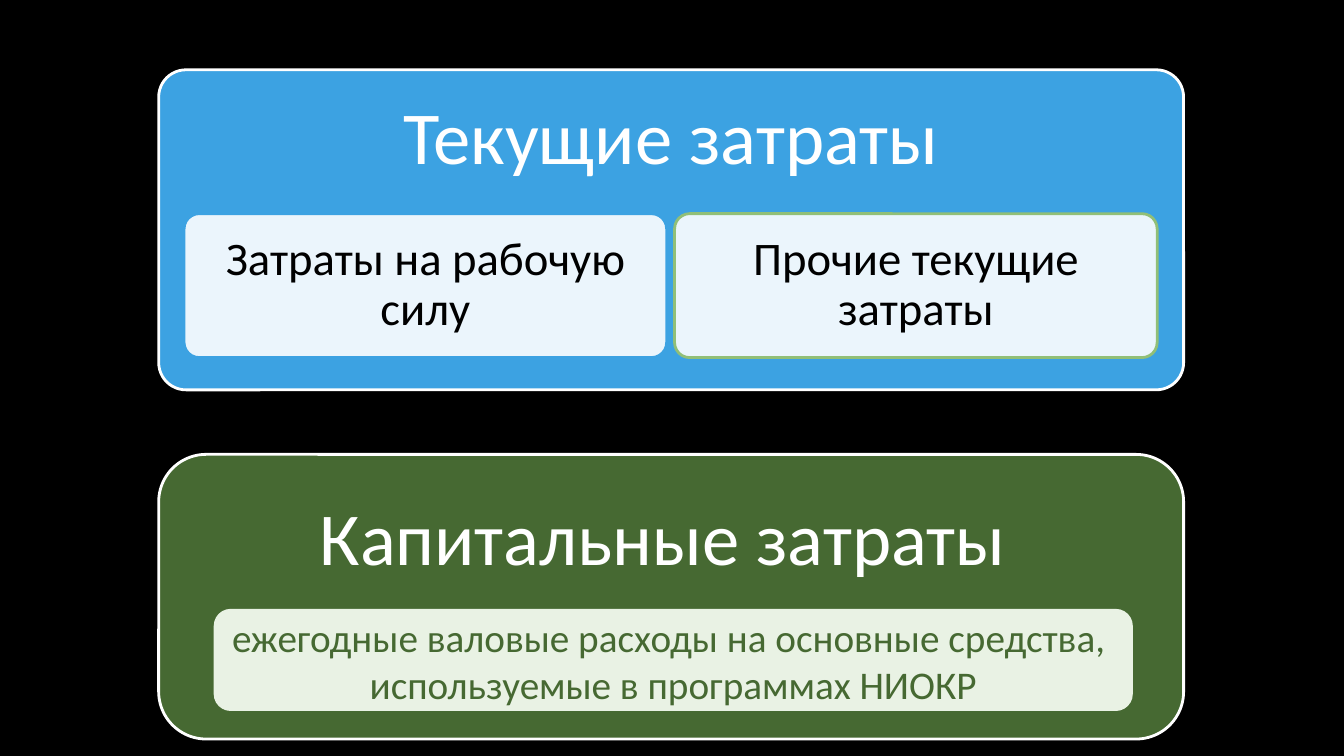
import pptx
import pptx.dml.color
import pptx.enum.shapes
import pptx.enum.text
import pptx.oxml.ns
import pptx.util
from lxml import etree
from pptx.util import Cm

COLOURS = {
    "background": "000000",
    "blue": "3CA2E2",
    "green": "466932",
    "light green": "91BF77",
    "pale green": "E9F2E4",
    "white": "FFFFFF",
    "black": "000000",
}

# Lengths are in centimetres.
PANELS = [
    {
        "heading": "Текущие затраты", "fill": "blue", "top": 1.32, "height": 6.05,
        "rounding": 0.085, "spacing": 0.9,
        "cards": {
            "items": [(["Затраты на рабочую силу"], "blue"),
                      (["Прочие текущие затраты"], "light green")],
            "left": 3.48, "top": 4.04, "width": 9.12, "height": 2.72, "gap": 0.15,
            "rounding": 0.105, "fill": "white", "opacity": 90,
            "size": 25, "colour": "black", "inset": 0.25,
        },
    },
    {
        "heading": "Капитальные затраты ", "fill": "green", "top": 8.59, "height": 5.38,
        "rounding": 0.1667, "spacing": 1.0,
        "cards": {
            "items": [(["ежегодные валовые расходы на основные средства, ",
                        "используемые в программах НИОКР"], None)],
            "left": 4.04, "top": 11.51, "width": 17.37, "height": 1.93, "gap": 0,
            "rounding": 0.1667, "fill": "pale green", "opacity": 100,
            "size": 21, "colour": "green", "inset": 0,
        },
    },
]
PANEL_LEFT, PANEL_WIDTH, PANEL_INSET = 3, 19.37, 0.43


def colour(name):
    return pptx.dml.color.RGBColor.from_string(COLOURS[name])


def add_rounded_box(slide, left, top, width, height, rounding, fill, line, opacity=100):
    shape = slide.shapes.add_shape(
        pptx.enum.shapes.MSO_SHAPE.ROUNDED_RECTANGLE,
        Cm(left), Cm(top), Cm(width), Cm(height))
    shape.adjustments[0] = rounding
    shape.shadow.inherit = False
    shape.fill.solid()
    shape.fill.fore_color.rgb = colour(fill)
    if opacity < 100:
        fill_colour = shape._element.spPr.find(".//" + pptx.oxml.ns.qn("a:srgbClr"))
        alpha = etree.SubElement(fill_colour, pptx.oxml.ns.qn("a:alpha"))
        alpha.set("val", str(opacity * 1000))
    if line:
        shape.line.color.rgb = colour(line)
        shape.line.width = pptx.util.Pt(1.5)
    else:
        shape.line.fill.background()
    return shape


def write_text(shape, lines, size, text_colour, spacing, inset, anchor):
    frame = shape.text_frame
    frame.word_wrap = True
    frame.vertical_anchor = anchor
    frame.margin_left = frame.margin_right = Cm(inset)
    frame.margin_top = frame.margin_bottom = Cm(inset)
    frame.text = "\n".join(lines)
    for paragraph in frame.paragraphs:
        paragraph.alignment = pptx.enum.text.PP_ALIGN.CENTER
        paragraph.line_spacing = spacing
        for run in paragraph.runs:
            run.font.name = "Calibri"
            run.font.size = pptx.util.Pt(size)
            run.font.color.rgb = colour(text_colour)


def add_panel(slide, panel):
    anchors = pptx.enum.text.MSO_ANCHOR
    box = add_rounded_box(slide, PANEL_LEFT, panel["top"], PANEL_WIDTH, panel["height"],
                          panel["rounding"], panel["fill"], "white")
    write_text(box, [panel["heading"]], 40, "white", panel["spacing"],
               PANEL_INSET, anchors.TOP)
    cards = panel["cards"]
    for index, (lines, outline) in enumerate(cards["items"]):
        left = cards["left"] + index * (cards["width"] + cards["gap"])
        card = add_rounded_box(slide, left, cards["top"], cards["width"], cards["height"],
                               cards["rounding"], cards["fill"], outline, cards["opacity"])
        write_text(card, lines, cards["size"], cards["colour"], panel["spacing"],
                   cards["inset"], anchors.MIDDLE)


def main():
    presentation = pptx.Presentation()
    presentation.slide_width = Cm(25.4)
    presentation.slide_height = Cm(14.29)
    slide = presentation.slides.add_slide(presentation.slide_layouts[6])
    slide.background.fill.solid()
    slide.background.fill.fore_color.rgb = colour("background")
    for panel in PANELS:
        add_panel(slide, panel)
    presentation.save("out.pptx")


if __name__ == "__main__":
    main()
